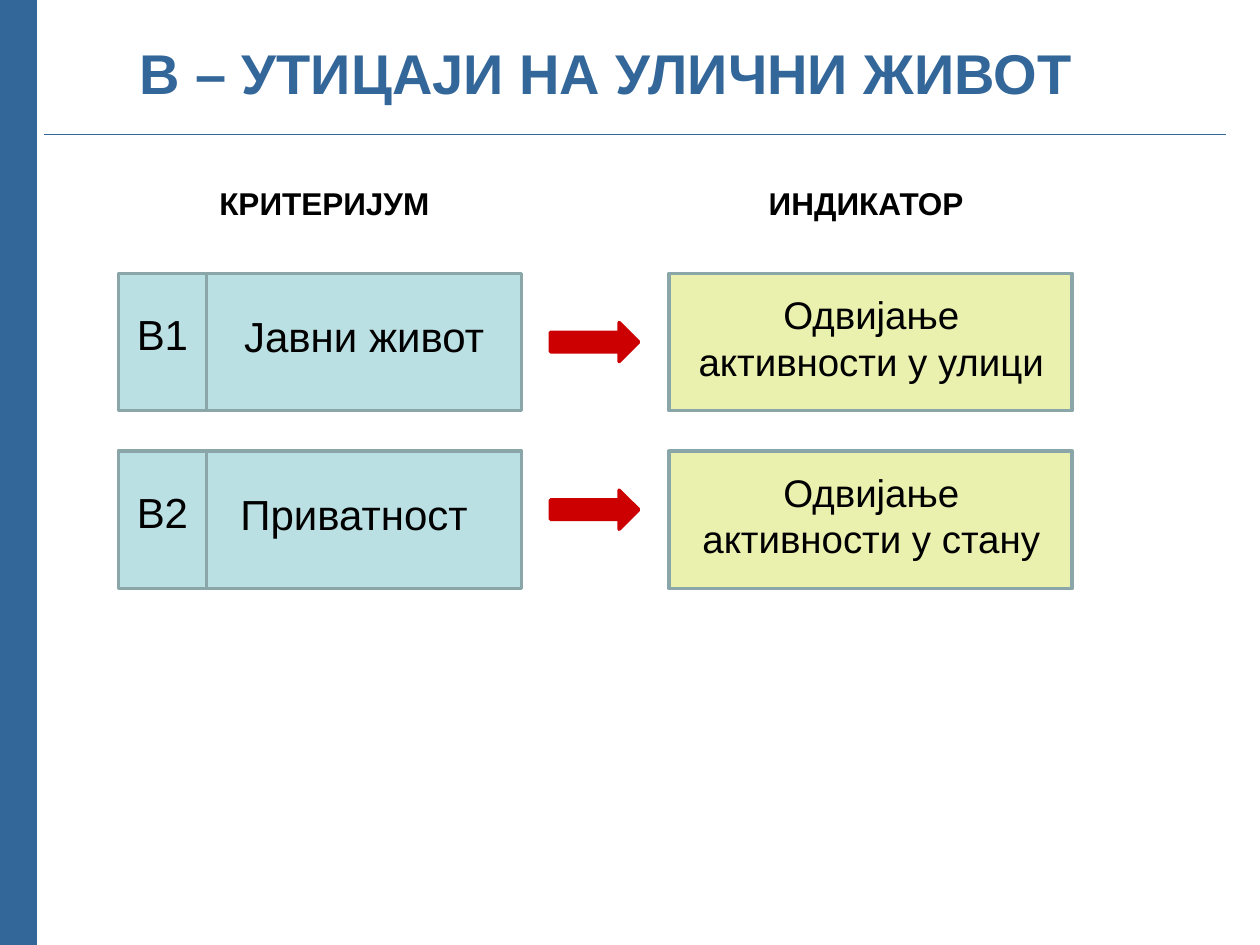
"""Build the slide on effects on street life: two criteria and their indicators."""
from lxml.etree import SubElement as Sub
from pptx import Presentation
from pptx.dml.color import RGBColor as Rgb
from pptx.enum.shapes import MSO_CONNECTOR as Conn, MSO_SHAPE as Kind
from pptx.enum.text import MSO_ANCHOR as Anchor, MSO_AUTO_SIZE as Auto, PP_ALIGN as Align
from pptx.oxml.ns import qn
from pptx.util import Pt

HUES = {"blue": "336699", "aqua": "BBE0E3", "lime": "EAF0AE",
        "edge": "8AA6A8", "red": "CC0000", "black": "000000"}
ROWS = [("В1", "Јавни живот", 191.5, "Одвијање активности у улици", 156.2, 184.3),
        ("В2", "Приватност", 180, "Одвијање активности у стану", 257.8, 280.1)]
HEADS = [("КРИТЕРИЈУМ", 84.2), ("ИНДИКАТОР", 393.8)]


def hue(name):
    return Rgb.from_string(HUES[name])


def write(frame, text, size=24, color="black", bold=False, space=None):
    frame.word_wrap = True
    para = frame.paragraphs[0]
    para.alignment = Align.CENTER
    if space:
        para.line_spacing = space
    run = para.add_run()
    run.text = text
    font = run.font
    font.name, font.size, font.bold = "Arial", Pt(size), bold
    font.color.rgb = hue(color)


def label(slide, text, left, top, width, height, **form):
    box = slide.shapes.add_textbox(Pt(left), Pt(top), Pt(width), Pt(height))
    write(box.text_frame, text, **form)
    box.text_frame.auto_size = Auto.SHAPE_TO_FIT_TEXT


def block(slide, kind, left, top, width, height, fill, edge):
    shape = slide.shapes.add_shape(kind, Pt(left), Pt(top), Pt(width), Pt(height))
    shape.shadow.inherit = False
    shape.fill.solid()
    shape.fill.fore_color.rgb = hue(fill)
    shape.line.color.rgb = hue(edge)
    shape.line.width = Pt(2)


def rule(slide, start, end, width):
    line = slide.shapes.add_connector(Conn.STRAIGHT, *map(Pt, start + end))
    line.line.color.rgb = hue("blue")
    line.line.width = Pt(width)
    Sub(line._element.spPr, qn("a:effectLst"))


def head(slide, text):
    title = slide.shapes.title
    title.left, title.top, title.width, title.height = map(Pt, (22.3, 0, 648, 90))
    frame = title.text_frame
    frame.vertical_anchor = Anchor.MIDDLE
    frame.auto_size = Auto.NONE
    write(frame, text, size=32, color="blue", bold=True, space=0.8)


def row(slide, code, name, span, sign, top, tip):
    for left, width, fill in ((67.7, 230.4, "aqua"), (67.7, 50.4, "aqua"), (382.3, 230.4, "lime")):
        block(slide, Kind.RECTANGLE, left, top, width, 78.5, fill, "edge")
    block(slide, Kind.RIGHT_ARROW, 314.6, tip, 50.4, 22.3, "red", "red")
    label(slide, code, 61.9, top + 16.6, 61.9, 36)
    label(slide, name, 112.3, top + 18, span, 36)
    label(slide, sign, 388.1, top + 6.8, 219.6, 60.5, size=22)


def main():
    deck = Presentation()
    deck.slide_width, deck.slide_height = Pt(720), Pt(540)
    slide = deck.slides.add_slide(deck.slide_layouts[5])
    head(slide, "В – УТИЦАЈИ НА УЛИЧНИ ЖИВОТ")
    rule(slide, (1.4, 0), (1.4, 540), 40)
    rule(slide, (25.2, 77), (700.6, 77), 0.75)
    for text, left in HEADS:
        label(slide, text, left, 101.5, 202.3, 28.8, size=18, bold=True)
    for item in ROWS:
        row(slide, *item)
    deck.save("out.pptx")


if __name__ == "__main__":
    main()
